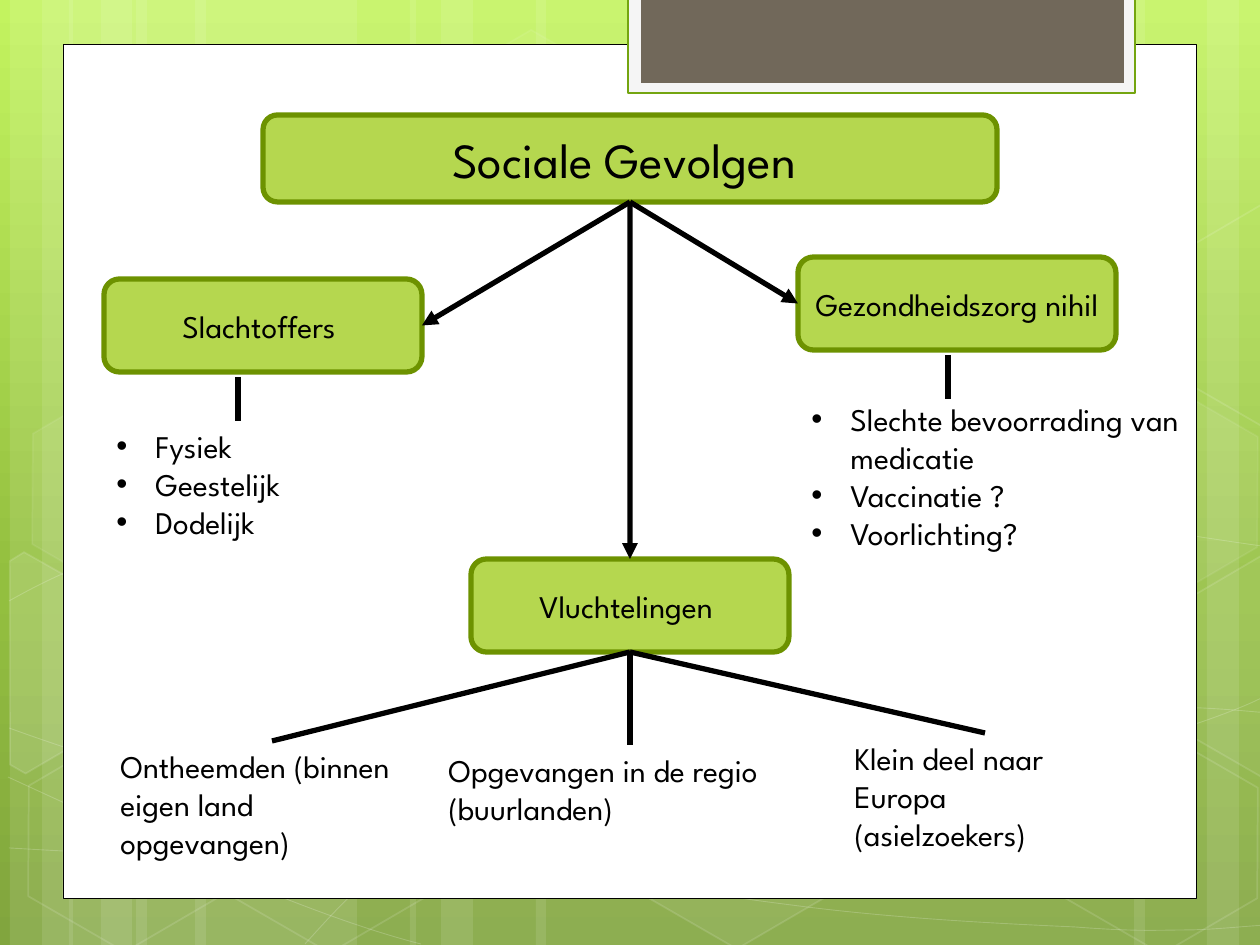
from copy import deepcopy

from lxml import etree
from pptx import Presentation, util as u
from pptx.dml.color import RGBColor
from pptx.enum import shapes, text
from pptx.oxml.ns import qn

PX = 914400 / 126
FONT = "League Spartan"
BLACK, WHITE = "000000", "FFFFFF"
GREEN, DARK_GREEN = "94C600", "6D9200"
SHAPE = shapes.MSO_SHAPE
TOP, LEFT, BOTTOM, RIGHT = range(4)

# Backdrop: stripes are (left, width); the other lists hold px points
STRIPES = [(136, 221), (10, 63), (42, 105), (195, 221), (69, 63), (101, 105),
           (924, 221), (1207, 63), (1134, 105), (536, 388), (410, 63), (441, 105)]
# Each curve is a start point, then two control points and an end per segment
CURVES = [
    [(9, 848), (77, 852), (145, 856), (239, 854), (334, 853), (451, 851), (577, 838),
     (703, 825), (882, 801), (998, 777), (1113, 753), (1231, 716), (1269, 694)],
    [(9, 601), (45, 581), (82, 562), (152, 543), (224, 524), (326, 496), (437, 488),
     (549, 479), (685, 478), (824, 488), (963, 498), (1193, 537), (1269, 547)],
    [(8, 777), (160, 847), (311, 916), (421, 944)],
    [(9, 728), (48, 742), (88, 756), (161, 776), (234, 795), (344, 827), (450, 848),
     (554, 869), (687, 892), (791, 905), (896, 919), (1008, 924), (1075, 927),
     (1140, 932), (1158, 930), (1191, 930), (1223, 929), (1246, 926), (1269, 925)],
    [(305, 944), (328, 919), (350, 893), (381, 871), (411, 848), (454, 823), (489, 805),
     (524, 788), (546, 780), (592, 767), (638, 755), (722, 737), (766, 728),
     (811, 719), (818, 719), (857, 717), (896, 713), (958, 709), (1000, 708),
     (1044, 707), (1116, 708), (1116, 708), (1144, 708), (1173, 708), (1201, 708),
     (1223, 709), (1245, 711), (1256, 712), (1268, 713), (1264, 712), (1268, 713)],
]
# Left, top, fill opacity, line opacity
HEXAGONS = [(421, 45, 4, 8), (626, 742, 6, 12), (14, 745, 0, 12), (18, 393, 7, 8),
            (219, 746, 0, 12), (949, 571, 10, 12), (1051, 747, 0, 12), (1051, 396, 7, 8)]
# Hexagons cut by the slide edge, before their turn of 30 degrees
LEFT_CUT = [(-42, 594), (-34, 579), (77, 578), (132, 675), (78, 770), (60, 770)]
RIGHT_CUT = [(1155, 654), (1209, 559), (1221, 559), (1326, 741), (1321, 750), (1211, 750)]
UPPER_CUT = [(x, y - 351) for x, y in RIGHT_CUT]


def px(*lengths):
    return [u.Emu(round(length * PX)) for length in lengths]


def color(value):
    return RGBColor.from_string(value)


def paint(fill, value, opacity=100):
    """Fill with a colour; zero opacity means no fill."""
    if not opacity:
        fill.background()
        return
    fill.solid()
    fill.fore_color.rgb = color(value)
    if opacity < 100:
        rgb = fill._xPr.find(qn("a:solidFill"))[0]
        etree.SubElement(rgb, qn("a:alpha"), val=str(opacity * 1000))


def style(shape, fill, opacity=100, line=None, width=1, line_opacity=100):
    shape.shadow.inherit = False
    paint(shape.fill, fill, opacity)
    if line:
        shape.line.width = u.Pt(width)
        paint(shape.line.fill, line, line_opacity)
    else:
        shape.line.fill.background()


def add_panel(slide, kind, box, *look):
    shape = slide.shapes.add_shape(kind, *px(*box))
    style(shape, *look)
    return shape


def add_outline(slide, points, closed, *look):
    start, *others = [px(*point) for point in points]
    builder = slide.shapes.build_freeform(*start)
    builder.add_line_segments(others, close=closed)
    shape = builder.convert_to_shape()
    style(shape, *look)
    return shape


def add_curve(slide, points):
    """Turn every three straight segments into one cubic curve."""
    shape = add_outline(slide, points, False, WHITE, 0, WHITE, 0.5, 20)
    segments = shape._element.xpath(".//a:lnTo")
    for first in range(0, len(segments), 3):
        curve, *rest = segments[first:first + 3]
        curve.tag = qn("a:cubicBezTo")
        for segment in rest:
            curve.append(segment[0])
            segment.getparent().remove(segment)


def format_text(paragraph, size):
    for run in paragraph.runs:
        run.font.size = u.Pt(size)
        run.font.name = FONT
        run.font.color.rgb = color(BLACK)


def add_box(slide, label, box, size=18):
    shape = add_panel(slide, SHAPE.ROUNDED_RECTANGLE, box, GREEN, 69, DARK_GREEN, 3)
    frame = shape.text_frame
    frame.text = label
    frame.word_wrap = True
    frame.vertical_anchor = text.MSO_ANCHOR.MIDDLE
    frame.paragraphs[0].alignment = text.PP_ALIGN.CENTER
    format_text(frame.paragraphs[0], size)
    return shape


def add_note(slide, lines, box, bullets=False):
    shape = slide.shapes.add_textbox(*px(*box))
    frame = shape.text_frame
    frame.text = "\n".join(lines)
    frame.word_wrap = True
    frame.auto_size = text.MSO_AUTO_SIZE.SHAPE_TO_FIT_TEXT
    for paragraph in frame.paragraphs:
        format_text(paragraph, 18)
        if bullets:
            properties = paragraph._p.get_or_add_pPr()
            indent = px(39)[0]
            properties.set("marL", str(indent))
            properties.set("indent", str(-indent))
            etree.SubElement(properties, qn("a:buFont"), typeface="Arial")
            etree.SubElement(properties, qn("a:buChar"), char="•")
    return shape


def add_line(slide, start=(0, 0), end=(0, 0), arrow=False):
    line = slide.shapes.add_connector(shapes.MSO_CONNECTOR.STRAIGHT, *px(*start, *end))
    line.line.width = u.Pt(3)
    paint(line.line.fill, BLACK)
    if arrow:
        etree.SubElement(line.line._get_or_add_ln(), qn("a:tailEnd"), type="triangle")
    etree.SubElement(line._element.spPr, qn("a:effectLst"))
    return line


def join(slide, source, target, side, arrow=False):
    line = add_line(slide, arrow=arrow)
    line.begin_connect(source, BOTTOM)
    line.end_connect(target, side)


def set_background(slide):
    fill = slide.background.fill
    fill.gradient()
    fill.gradient_angle = 270
    stop_list = slide._element.xpath(".//p:bg//a:gsLst")[0]
    stop_list.append(deepcopy(stop_list[-1]))
    stops = ((0, "C3F35F"), (0.62, "93BF3F"), (1, "81A53E"))
    for stop, (position, value) in zip(fill.gradient_stops, stops):
        stop.position = position
        stop.color.rgb = color(value)


def add_backdrop(slide):
    for left, width in STRIPES:
        add_panel(slide, SHAPE.RECTANGLE, (left, 0, width, 945), WHITE, 10)
    for points in CURVES:
        add_curve(slide, points)
    for left, top, opacity, line_opacity in HEXAGONS:
        hexagon = add_panel(slide, SHAPE.HEXAGON, (left, top, 221, 192),
                            WHITE, opacity, WHITE, 1, line_opacity)
        hexagon.adjustments[0] = 0.285
        hexagon.rotation = 30
    for points, opacity in ((LEFT_CUT, 10), (RIGHT_CUT, 4), (UPPER_CUT, 0)):
        add_outline(slide, points, True, WHITE, opacity, WHITE, 1, 12).rotation = 30
    # White page and the tab at its top
    add_panel(slide, SHAPE.RECTANGLE, (63, 45, 1134, 854), WHITE, 100, BLACK, 0.5)
    add_panel(slide, SHAPE.RECTANGLE, (628, -3, 507, 96), "F5F5F5", 100, "74A510", 1.25)
    add_panel(slide, SHAPE.RECTANGLE, (641, -3, 483, 86), "71685A")


def main():
    presentation = Presentation()
    presentation.slide_width, presentation.slide_height = px(1260, 945)
    slide = presentation.slides.add_slide(presentation.slide_layouts[6])
    set_background(slide)
    add_backdrop(slide)

    # Boxes
    care = add_box(slide, "Gezondheidszorg nihil ", (798, 257, 318, 93))
    title = add_box(slide, "Sociale Gevolgen ", (263, 115, 734, 87), 28)
    victims = add_box(slide, "Slachtoffers ", (104, 279, 318, 93))
    refugees = add_box(slide, "Vluchtelingen ", (471, 559, 318, 93))

    # Notes
    add_note(slide, ["Fysiek", "Geestelijk", "Dodelijk"], (104, 421, 268, 127), True)
    add_note(slide, ["Slechte bevoorrading van medicatie", "Vaccinatie ?", "Voorlichting?"],
             (799, 394, 397, 165), True)
    europe = add_note(slide, ["Klein deel naar Europa (asielzoekers)"], (842, 733, 286, 127))
    displaced = add_note(slide, ["Ontheemden (binnen eigen land opgevangen)"],
                         (108, 741, 328, 127))
    region = add_note(slide, ["Opgevangen in de regio (buurlanden)"], (436, 745, 388, 89))

    # Arrows and lines
    for target, side in ((victims, RIGHT), (refugees, TOP), (care, LEFT)):
        join(slide, title, target, side, arrow=True)
    for x, y in ((238, 377), (948, 355)):
        add_line(slide, (x, y), (x, y + 44))
    for target in (displaced, region, europe):
        join(slide, refugees, target, TOP)

    presentation.save("out.pptx")


if __name__ == "__main__":
    main()
